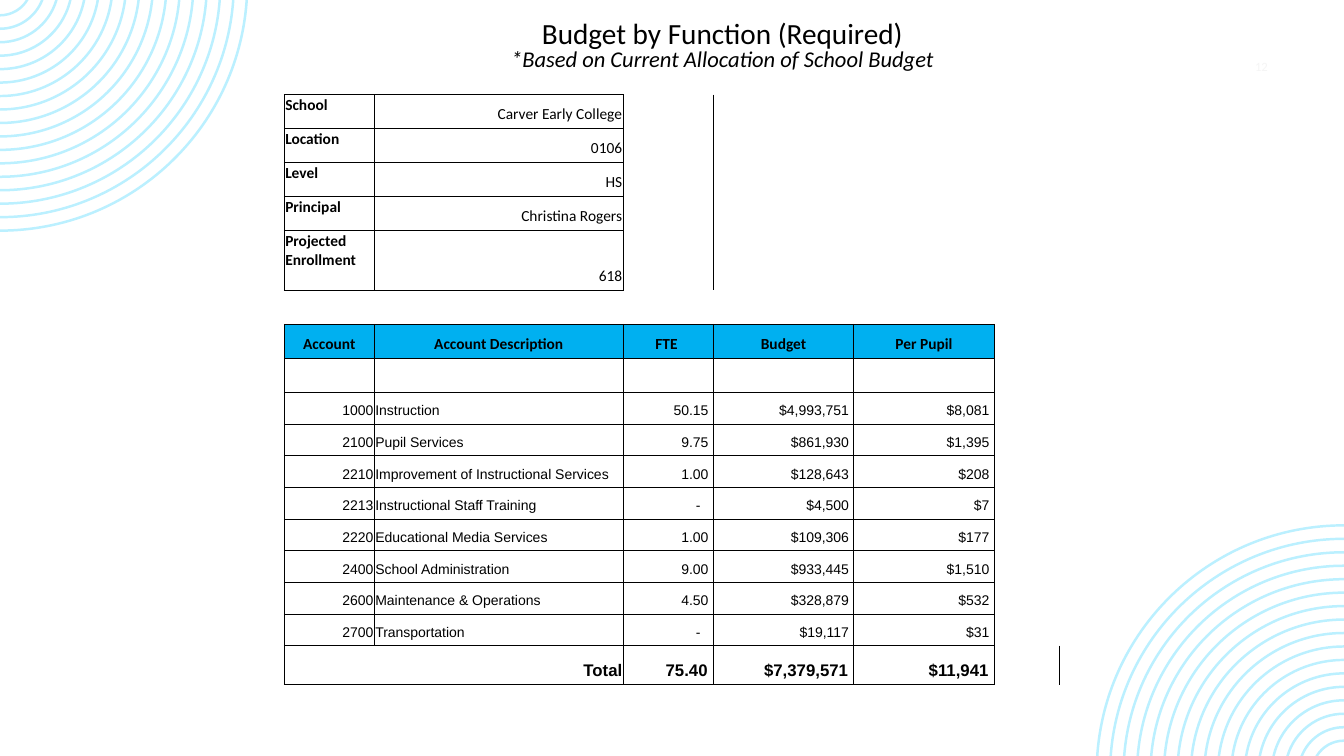
"""Build the school budget-by-function slide."""
import math
from dataclasses import dataclass
from typing import NamedTuple

from lxml import etree
from pptx import Presentation
from pptx import util as u
from pptx.dml.color import RGBColor
from pptx.enum import text
from pptx.oxml import ns

BLACK = RGBColor(0x00, 0x00, 0x00)
WHITE = RGBColor(0xFF, 0xFF, 0xFF)
HEADER_BLUE = RGBColor(0x00, 0xB0, 0xF0)
RING_BLUE = RGBColor(0xBB, 0xF0, 0xFF)
PALE_GREY = RGBColor(0xF5, 0xF5, 0xF5)

WIDTH, HEIGHT = u.Inches(13.33), u.Inches(7.5)
LEFT, CENTER, RIGHT = text.PP_ALIGN.LEFT, text.PP_ALIGN.CENTER, text.PP_ALIGN.RIGHT
TOP, MIDDLE, BOTTOM = (text.MSO_ANCHOR.TOP, text.MSO_ANCHOR.MIDDLE,
                       text.MSO_ANCHOR.BOTTOM)
NO_STYLE = "{2D5ABB26-0587-4C30-8999-92F81FD0307C}"
SIDES = {"lnL": (0, -1), "lnR": (0, 1), "lnT": (-1, 0), "lnB": (1, 0)}


def px(share: float) -> int:
    """Turn a percentage of the slide width into EMU."""
    return round(WIDTH * share / 100)


def py(share: float) -> int:
    """Turn a percentage of the slide height into EMU."""
    return round(HEIGHT * share / 100)


class Box(NamedTuple):
    """Hold a place as percentages of the slide size."""
    left: float
    top: float
    width: float
    height: float

    def emu(self) -> tuple:
        """Return the place in EMU."""
        return px(self.left), py(self.top), px(self.width), py(self.height)


class Account(NamedTuple):
    """Hold one line of the budget."""
    code: str
    description: str
    fte: str
    budget: str
    per_pupil: str


@dataclass(frozen=True)
class Style:
    """Describe the text and fill of a table cell."""
    size: float = 11
    name: str = "Calibri"
    bold: bool = False
    align: int = LEFT
    anchor: int = BOTTOM
    fill: RGBColor = WHITE


TITLE_BOX = Box(20, 3.73, 67.5, 8.8)
NUMBER_BOX = Box(92, 6.8, 3.7, 4)
TABLE_BOX = Box(21.15, 12.53, 57.71, 78.05)
COLUMNS = [6.7, 18.53, 6.7, 10.45, 10.45, 4.88]
INFO = [("School", "Carver Early College"), ("Location", "0106"),
        ("Level", "HS"), ("Principal", "Christina Rogers"),
        ("Projected Enrollment", "618")]
HEADERS = ["Account", "Account Description", "FTE ", "Budget", "Per Pupil"]
ACCOUNTS = [
    Account("1000", "Instruction", "50.15", "$4,993,751", "$8,081"),
    Account("2100", "Pupil Services", "9.75", "$861,930", "$1,395"),
    Account("2210", "Improvement of Instructional Services", "1.00", "$128,643", "$208"),
    Account("2213", "Instructional Staff Training", "-", "$4,500", "$7"),
    Account("2220", "Educational Media Services", "1.00", "$109,306", "$177"),
    Account("2400", "School Administration", "9.00", "$933,445", "$1,510"),
    Account("2600", "Maintenance & Operations", "4.50", "$328,879", "$532"),
    Account("2700", "Transportation", "-", "$19,117", "$31"),
]
TOTAL = Account("Total", "", "75.40", "$7,379,571", "$11,941")
HEADER_ROW = len(INFO) + 1
FIRST_ACCOUNT = HEADER_ROW + 2
TOTAL_ROW = FIRST_ACCOUNT + len(ACCOUNTS)
ROWS = [4.5] * 4 + [7.87] + [4.5] * 3 + [4.19] * len(ACCOUNTS) + [5.16]

LABEL = Style(bold=True, anchor=TOP)
VALUE = Style(align=RIGHT)
HEADER = Style(bold=True, align=CENTER, fill=HEADER_BLUE)
ENTRY = Style(size=10, name="Arial")
FIGURE = Style(size=10, name="Arial", align=RIGHT)
SUM = Style(size=12, name="Arial", bold=True, align=RIGHT)


def set_attrs(target, values: dict) -> None:
    """Set every named attribute on the target."""
    for key, value in values.items():
        setattr(target, key, value)


def write(p, words: str, color: RGBColor, **font) -> None:
    """Add a formatted run to a paragraph."""
    r = p.add_run()
    r.text = words
    set_attrs(r.font, font)
    r.font.color.rgb = color


def ring(radius: float, flipped: bool) -> list:
    """Return the Bezier points of a ring's outer and inner arcs."""
    rise, thickness, points = 2.2, 0.33, []
    for rad, order in ((radius, 1), (radius - thickness, -1)):
        a = math.asin(rise / rad)
        k = rad * 4 / 3 * math.tan((math.pi / 2 - a) / 4)
        x, y = rad * math.cos(a), rad * math.sin(a)
        arc = [(x, y), (x - k * math.sin(a), y + k * math.cos(a)), (k, rad), (0, rad)]
        points += [(py(x), py(y - rise)) for x, y in arc[::order]]
    return [(WIDTH - x, HEIGHT - y) for x, y in points] if flipped else points


def curve(sp) -> None:
    """Join the segments of each arc into one cubic curve."""
    lines = list(sp._element.iter(ns.qn("a:lnTo")))
    for i in range(0, len(lines), 7):
        for trio in (lines[i:i + 3], lines[i + 4:i + 7]):
            cubic = etree.Element(ns.qn("a:cubicBezTo"))
            trio[0].addprevious(cubic)
            for line in trio:
                cubic.append(line[0])
                line.getparent().remove(line)


def add_rings(s, flipped: bool) -> None:
    """Draw the concentric rings of one corner."""
    outlines = [ring(32.87 - 1.78 * i, flipped) for i in range(17)]
    fb = s.shapes.build_freeform(*outlines[0][0], scale=1.0)
    for i, outline in enumerate(outlines):
        if i:
            fb.move_to(*outline[0])
        fb.add_line_segments(outline[1:], close=True)
    sp = fb.convert_to_shape()
    curve(sp)
    sp.shadow.inherit = False
    sp.fill.solid()
    sp.fill.fore_color.rgb = RING_BLUE
    sp.line.fill.background()


def add_title(s) -> None:
    """Fill the title placeholder with heading and subheading."""
    sp = s.shapes.title
    set_attrs(sp, dict(zip(("left", "top", "width", "height"), TITLE_BOX.emu())))
    tf = sp.text_frame
    set_attrs(tf, {"word_wrap": True, "auto_size": text.MSO_AUTO_SIZE.NONE,
                   "vertical_anchor": MIDDLE, "margin_top": 0, "margin_bottom": py(3.73)})
    lines = [("Budget by Function (Required)", 20.9, False),
             ("*Based on Current Allocation of School Budget", 16.1, True)]
    for i, (words, size, italic) in enumerate(lines):
        p = tf.add_paragraph() if i else tf.paragraphs[0]
        set_attrs(p, {"alignment": CENTER, "line_spacing": 0.8})
        write(p, words, BLACK, size=u.Pt(size), name="Calibri", italic=italic)


def add_number(s) -> None:
    """Add the pale slide number."""
    tf = s.shapes.add_textbox(*NUMBER_BOX.emu()).text_frame
    set_attrs(tf, {"word_wrap": True, "vertical_anchor": MIDDLE})
    p = tf.paragraphs[0]
    p.alignment = CENTER
    write(p, "12", PALE_GREY, size=u.Pt(9), name="Calibri")


def boxed(row: int, col: int) -> bool:
    """Tell whether a cell belongs to one of the two ruled blocks."""
    return (0 <= row < len(INFO) and 0 <= col < 2
            or HEADER_ROW <= row <= TOTAL_ROW and 0 <= col < len(HEADERS))


def add_borders(cell, row: int, col: int) -> None:
    """Rule each side that touches a boxed cell."""
    tc_pr = cell._tc.get_or_add_tcPr()
    for tag, (down, across) in SIDES.items():
        if boxed(row, col) or boxed(row + down, col + across):
            ln = etree.SubElement(tc_pr, ns.qn(f"a:{tag}"), w=str(u.Pt(0.5)))
            fill = etree.SubElement(ln, ns.qn("a:solidFill"))
            etree.SubElement(fill, ns.qn("a:srgbClr"), val=str(BLACK))


def fill_cell(cell, words: str, style: Style) -> None:
    """Write and format one cell."""
    edge = u.Inches(0.01)
    set_attrs(cell, {"margin_left": edge, "margin_top": edge,
                     "margin_right": u.Inches(0.09) if words == "- " else edge,
                     "margin_bottom": u.Inches(0.05), "vertical_anchor": style.anchor})
    p = cell.text_frame.paragraphs[0]
    p.alignment = style.align
    if words:
        write(p, words, BLACK, size=u.Pt(style.size), name=style.name, bold=style.bold)
    else:
        etree.SubElement(p._p, ns.qn("a:endParaRPr"), sz="1000")


def table_content() -> dict:
    """Map each filled cell's row and column to its words and style."""
    content = {}
    for row, (label, value) in enumerate(INFO):
        content.update({(row, 0): (label, LABEL), (row, 1): (value, VALUE)})
    content.update({(HEADER_ROW, c): (w, HEADER) for c, w in enumerate(HEADERS)})
    for row, account in enumerate(ACCOUNTS + [TOTAL], FIRST_ACCOUNT):
        for col, words in enumerate(account):
            style = SUM if row == TOTAL_ROW else ENTRY if col == 1 else FIGURE
            content[row, col] = (f"{words} " if col > 1 else words, style)
    return content


def add_budget_table(s) -> None:
    """Draw the school details and the budget as one table."""
    table = s.shapes.add_table(len(ROWS), len(COLUMNS), *TABLE_BOX.emu()).table
    set_attrs(table, {"first_row": False, "horz_banding": False})
    table._tbl.tblPr.find(ns.qn("a:tableStyleId")).text = NO_STYLE
    for col, share in enumerate(COLUMNS):
        table.columns[col].width = px(share)
    for row, share in enumerate(ROWS):
        table.rows[row].height = py(share)
    table.cell(TOTAL_ROW, 0).merge(table.cell(TOTAL_ROW, 1))
    content = table_content()
    for row in range(len(ROWS)):
        for col in range(len(COLUMNS)):
            cell = table.cell(row, col)
            words, style = content.get((row, col), ("", ENTRY))
            fill_cell(cell, words, style)
            add_borders(cell, row, col)
            if row >= HEADER_ROW and boxed(row, col):
                cell.fill.solid()
                cell.fill.fore_color.rgb = style.fill
            else:
                cell.fill.background()


def main() -> None:
    """Build and save the presentation."""
    prs = Presentation()
    set_attrs(prs, {"slide_width": WIDTH, "slide_height": HEIGHT})
    s = prs.slides.add_slide(prs.slide_layouts[5])
    for flipped in (False, True):
        add_rings(s, flipped)
    add_title(s)
    add_number(s)
    add_budget_table(s)
    prs.save("out.pptx")


if __name__ == "__main__":
    main()
